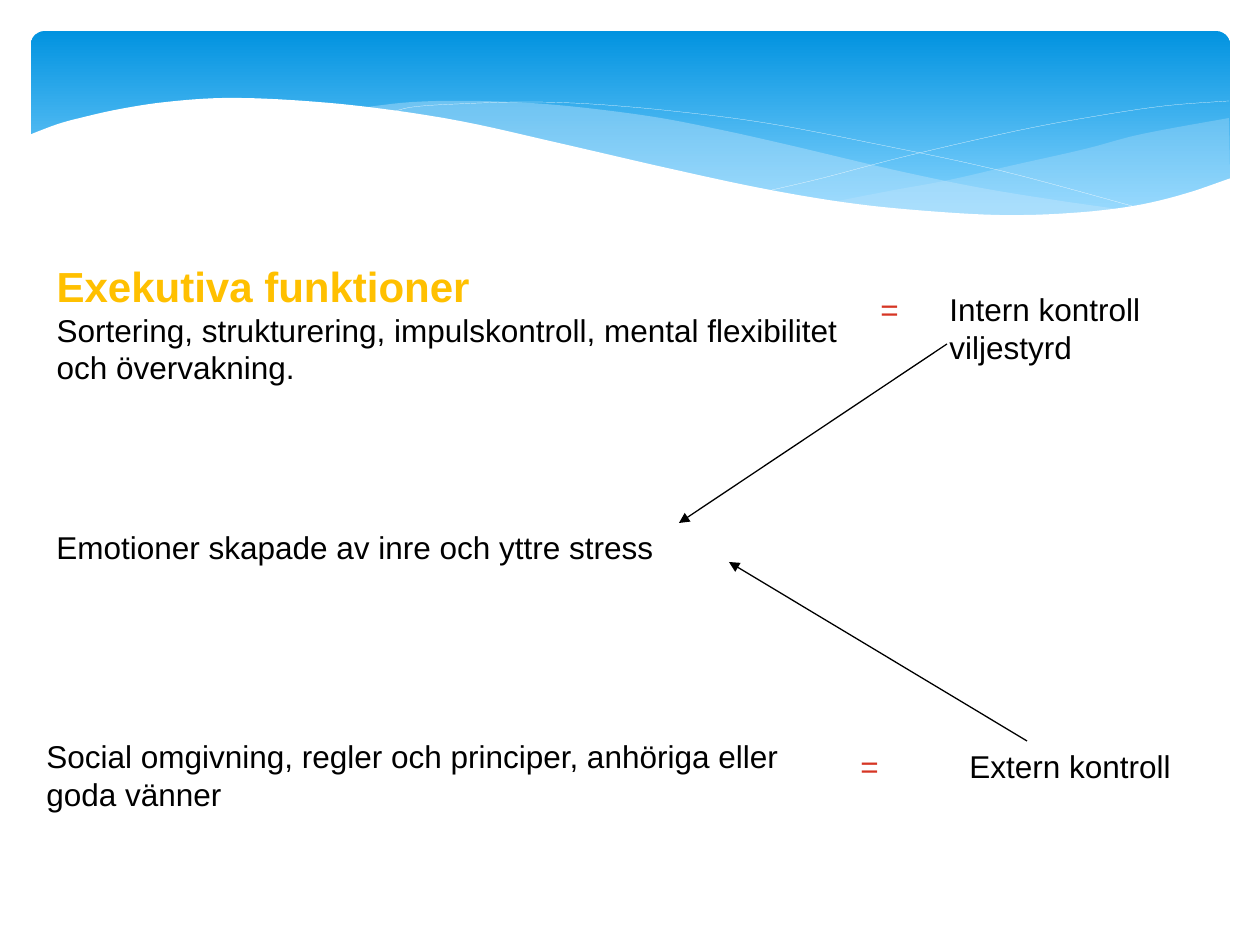
from itertools import chain

from lxml.etree import SubElement
from pptx import Presentation
from pptx.dml.color import RGBColor
from pptx.enum.shapes import MSO_CONNECTOR, MSO_SHAPE
from pptx.enum.text import MSO_ANCHOR, MSO_AUTO_SIZE, PP_ALIGN
from pptx.oxml.ns import qn
from pptx.util import Emu, Pt

PX_PER_INCH = 126
FONT = "Arial"
COLORS = {
    "sky_top": "0293E0",
    "sky_bottom": "83D3FE",
    "wave": "C6E7FC",
    "white": "FFFFFF",
    "black": "000000",
    "heading": "FFC000",
    "equals": "D63524",
}

RIGHT_WAVE_TOP = [(1229, 118), (1142, 134), (1085, 149), (1014, 165),
                  (949, 180), (889, 191), (833, 202)]
RIGHT_WAVE_BOTTOM = [(833, 202), (906, 211), (985, 216), (1052, 217),
                     (1110, 212), (1160, 202), (1196, 191), (1230, 178)]
LEFT_WAVE_TOP = [(1125, 210), (1055, 200), (976, 187), (890, 169), (793, 146),
                 (717, 129), (648, 116), (557, 105), (479, 101), (413, 102),
                 (360, 108)]
LEFT_WAVE_BOTTOM = [(360, 108), (431, 118), (509, 133), (566, 146), (668, 170),
                    (757, 189), (838, 203), (916, 211), (989, 217), (1056, 218),
                    (1125, 210)]
FALLING_LINE = [(389, 113), (413, 107), (457, 104), (524, 102), (591, 104),
                (672, 111), (766, 123), (876, 144), (1002, 171), (1143, 209)]
RISING_LINE = [(772, 190), (823, 178), (907, 156), (1016, 131), (1091, 117),
               (1164, 106), (1229, 101)]
WHITE_EDGE = [(1231, 178), (1184, 194), (1133, 206), (1071, 213), (999, 215),
              (915, 210), (842, 202), (760, 188), (667, 168), (563, 144),
              (460, 121), (368, 107), (290, 100), (223, 98), (166, 102),
              (120, 109), (84, 117), (58, 124), (29, 135)]
WHITE_BASE = [(29, 282), (1231, 282)]


def px(length):
    return Emu(round(length * 914400 / PX_PER_INCH))


def color(name):
    return RGBColor.from_string(COLORS[name])


def smooth(points, steps=6):
    """Return points along a Catmull-Rom curve through the given points."""
    padded = [points[0], *points, points[-1]]
    curve = [points[0]]
    for a, b, c, d in zip(padded, padded[1:], padded[2:], padded[3:]):
        for step in range(1, steps + 1):
            t = step / steps
            curve.append(tuple(
                (2 * q + (r - p) * t + (2 * p - 5 * q + 4 * r - s) * t ** 2
                 + (3 * q - p - 3 * r + s) * t ** 3) / 2
                for p, q, r, s in zip(a, b, c, d)))
    return curve


def add_outline(page, *parts, fill=None, alpha=None):
    """Draw a filled closed outline, or an open white hairline without fill."""
    points = [(px(x), px(y)) for x, y in chain(*parts)]
    builder = page.shapes.build_freeform(*points[0])
    builder.add_line_segments(points[1:], close=fill is not None)
    outline = builder.convert_to_shape()
    outline.shadow.inherit = False
    if fill is None:
        outline.fill.background()
        outline.line.color.rgb = color("white")
        outline.line.width = Pt(0.1)
        return
    outline.line.fill.background()
    outline.fill.solid()
    outline.fill.fore_color.rgb = color(fill)
    if alpha is not None:
        tint = outline.fill._xPr.find(".//" + qn("a:srgbClr"))
        SubElement(tint, qn("a:alpha"), val=str(alpha * 1000))


def add_sky(page):
    sky = page.shapes.add_shape(MSO_SHAPE.ROUNDED_RECTANGLE,
                                px(31), px(31), px(1199), px(197))
    sky.adjustments[0] = 0.07
    sky.shadow.inherit = False
    sky.line.fill.background()
    sky.fill.gradient()
    sky.fill.gradient_angle = 270
    stops = zip(sky.fill.gradient_stops, ("sky_top", "sky_bottom"), (0, 0.9))
    for stop, name, position in stops:
        stop.color.rgb = color(name)
        stop.position = position


def add_header(page):
    add_sky(page)
    add_outline(page, smooth(RIGHT_WAVE_TOP), smooth(RIGHT_WAVE_BOTTOM),
                fill="wave", alpha=29)
    add_outline(page, smooth(LEFT_WAVE_TOP), smooth(LEFT_WAVE_BOTTOM),
                fill="wave", alpha=40)
    add_outline(page, smooth(FALLING_LINE))
    add_outline(page, smooth(RISING_LINE))
    add_outline(page, smooth(WHITE_EDGE), WHITE_BASE, fill="white")


def bring_to_front(page, box):
    page.shapes._spTree.append(box._element)


def write(paragraph, text, size=18, fill="black", bold=False):
    paragraph.alignment = PP_ALIGN.LEFT
    span = paragraph.add_run()
    span.text = text
    span.font.name = FONT
    span.font.size = Pt(size)
    span.font.bold = bold
    span.font.color.rgb = color(fill)


def fill_box(box, place, lines, heading=None, **style):
    box.left, box.top, box.width, box.height = map(px, place)
    frame = box.text_frame
    frame.word_wrap = False
    frame.auto_size = MSO_AUTO_SIZE.NONE
    frame.vertical_anchor = MSO_ANCHOR.TOP
    paragraph = frame.paragraphs[0]
    if heading:
        write(paragraph, heading, size=24, fill="heading", bold=True)
        paragraph = frame.add_paragraph()
    for index, line in enumerate(lines):
        write(paragraph if index == 0 else frame.add_paragraph(), line, **style)


def add_label(page, place, *lines, **style):
    fill_box(page.shapes.add_textbox(0, 0, 0, 0), place, lines, **style)


def add_arrow(page, start, end):
    arrow = page.shapes.add_connector(MSO_CONNECTOR.STRAIGHT,
                                      *map(px, (*start, *end)))
    arrow.line.color.rgb = color("black")
    arrow.line.width = Pt(0.75)
    SubElement(arrow.line._get_or_add_ln(), qn("a:tailEnd"), type="triangle")
    SubElement(arrow._element.spPr, qn("a:effectLst"))


def main():
    deck = Presentation()
    deck.slide_width, deck.slide_height = px(1260), px(945)
    page = deck.slides.add_slide(deck.slide_layouts[5])
    title = page.shapes.title
    add_header(page)
    bring_to_front(page, title)

    fill_box(title, (44, 254, 814, 140),
             ["Sortering, strukturering, impulskontroll, mental flexibilitet",
              "och övervakning."],
             heading="Exekutiva funktioner")
    add_label(page, (937, 284, 218, 89), "Intern kontroll", "viljestyrd")
    add_label(page, (848, 741, 44, 50), "=", fill="equals")
    add_label(page, (34, 731, 767, 88),
              "Social omgivning, regler och principer, anhöriga eller",
              "goda vänner")
    add_label(page, (868, 284, 44, 50), "=", fill="equals")
    add_label(page, (957, 741, 227, 50), "Extern kontroll")
    add_label(page, (44, 522, 622, 50),
              "Emotioner skapade av inre och yttre stress")

    add_arrow(page, (947, 344), (679, 523))
    add_arrow(page, (1027, 741), (729, 562))
    deck.save("out.pptx")


if __name__ == "__main__":
    main()
